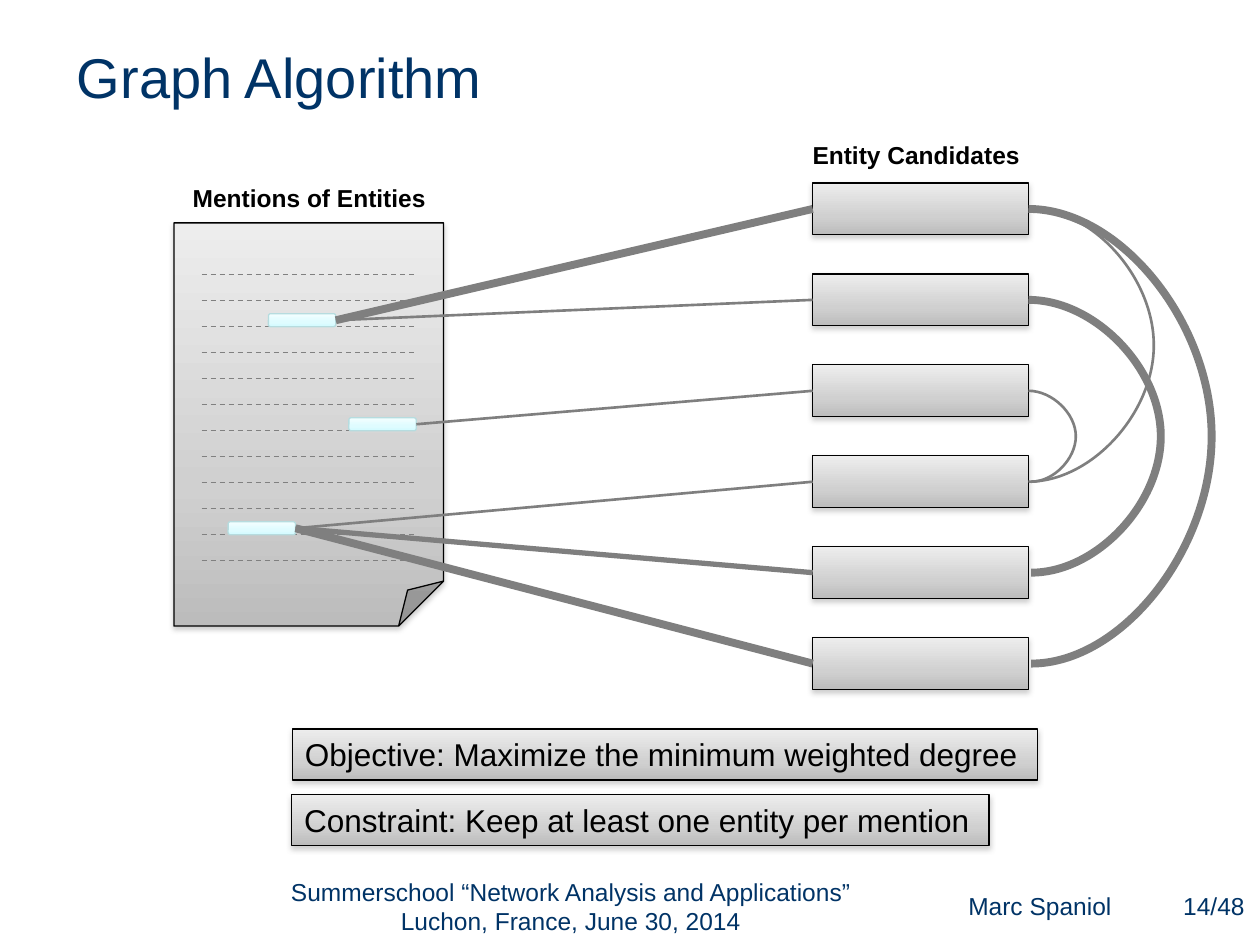
from lxml import etree
from pptx import Presentation
from pptx.dml.color import RGBColor
from pptx.enum.dml import MSO_LINE
from pptx.enum.shapes import MSO_CONNECTOR, MSO_SHAPE
from pptx.enum.text import MSO_ANCHOR, MSO_AUTO_SIZE, PP_ALIGN
from pptx.oxml.ns import qn
from pptx.util import Pt

STRAIGHT, CURVE = MSO_CONNECTOR.STRAIGHT, MSO_CONNECTOR.CURVE
RECTANGLE, ROUNDED = MSO_SHAPE.RECTANGLE, MSO_SHAPE.ROUNDED_RECTANGLE
FOLDED_CORNER = MSO_SHAPE.FOLDED_CORNER
DASH = MSO_LINE.DASH
LEFT, CENTER = PP_ALIGN.LEFT, PP_ALIGN.CENTER
TOP, MIDDLE = MSO_ANCHOR.TOP, MSO_ANCHOR.MIDDLE
FIT_TEXT = MSO_AUTO_SIZE.SHAPE_TO_FIT_TEXT
LEFT_SIDE, RIGHT_SIDE = 1, 3

FONT = "Arial"
NAVY = RGBColor(0x00, 0x33, 0x66)
BLACK = RGBColor(0x00, 0x00, 0x00)
EDGE_GRAY = RGBColor(0x7F, 0x7F, 0x7F)
RULE_GRAY = RGBColor(0x80, 0x80, 0x80)
MENTION_BORDER = RGBColor(0xB6, 0xDC, 0xDF)
GRAY_STOPS = [(0, RGBColor(0xED, 0xED, 0xED)), (65, RGBColor(0xD0, 0xD0, 0xD0)),
              (100, RGBColor(0xBC, 0xBC, 0xBC))]
CYAN_STOPS = [(0, RGBColor(0xD3, 0xFB, 0xFF)), (35, RGBColor(0xDF, 0xFC, 0xFF)),
              (100, RGBColor(0xF2, 0xFE, 0xFF))]

THIN, MEDIUM, THICK = 1.5, 3, 4.5

# Text line in the page and left offset of each mention
MENTIONS = [(2, 54), (6, 100), (10, 31)]
# Mention, candidate, weight
MENTION_EDGES = [(0, 0, THICK), (0, 1, THIN), (1, 2, THIN),
                 (2, 5, THICK), (2, 3, THIN), (2, 4, MEDIUM)]
# Candidate, candidate, weight, distance of the curve's middle control line
CANDIDATE_EDGES = [(0, 5, THICK, 104.5), (2, 3, THIN, 27),
                   (1, 4, THICK, 75.5), (3, 0, THIN, 71.5)]


def write(shape, text, size, color, align=LEFT, anchor=TOP, bold=False):
    frame = shape.text_frame
    frame.vertical_anchor = anchor
    paragraph = frame.paragraphs[0]
    paragraph.alignment = align
    run = paragraph.add_run()
    run.text = text
    run.font.name = FONT
    run.font.size = Pt(size)
    run.font.bold = bold
    run.font.color.rgb = color
    return frame


def add_text(slide, box, text, color, **style):
    shape = slide.shapes.add_textbox(*map(Pt, box))
    return write(shape, text, 14, color, **style)


def add_label(slide, box, text):
    frame = add_text(slide, box, text, BLACK, bold=True)
    frame.word_wrap = False
    frame.auto_size = FIT_TEXT


def add_gradient_shape(shapes, kind, box, stops, angle, border):
    shape = shapes.add_shape(kind, *map(Pt, box))
    shape.fill.gradient()
    shape.fill.gradient_angle = angle
    stop_list = shape._element.spPr.find(qn("a:gradFill")).find(qn("a:gsLst"))
    for stop in list(stop_list):
        stop_list.remove(stop)
    for position, color in stops:
        stop = etree.SubElement(stop_list, qn("a:gs"), pos=str(position * 1000))
        etree.SubElement(stop, qn("a:srgbClr"), val=str(color))
    shape.line.color.rgb = border
    shape.line.width = Pt(0.75)
    shape.shadow.inherit = False
    return shape


def add_gray_shape(shapes, kind, box):
    shape = add_gradient_shape(shapes, kind, box, GRAY_STOPS, 270, BLACK)
    effects = shape._element.spPr.find(qn("a:effectLst"))
    shadow = etree.SubElement(effects, qn("a:outerShdw"), blurRad=str(Pt(3.1)),
                              dist=str(Pt(1.6)), dir="5400000", rotWithShape="0")
    color = etree.SubElement(shadow, qn("a:srgbClr"), val=str(RULE_GRAY))
    etree.SubElement(color, qn("a:alpha"), val="38000")
    return shape


def add_line(shapes, kind, start, end, color, width):
    line = shapes.add_connector(kind, *map(Pt, (*start, *end)))
    line.line.color.rgb = color
    line.line.width = Pt(width)
    etree.SubElement(line._element.spPr, qn("a:effectLst"))
    return line


def add_title(slide, box, text):
    title = slide.shapes.title
    title.left, title.top, title.width, title.height = map(Pt, box)
    write(title, text, 32, NAVY, anchor=MIDDLE)


def add_page(slide, box):
    """Draw the folded page with its text lines; return the mention shapes."""
    left, top, width, height = box
    shapes = slide.shapes.add_group_shape().shapes
    add_gray_shape(shapes, FOLDED_CORNER, box)

    # Twelve dashed text lines
    pitch = 14.86
    rules = [top + 29.6 + index * pitch for index in range(12)]
    for y in rules:
        rule = add_line(shapes, STRAIGHT, (left + 15.8, y),
                        (left + width - 15.7, y), RULE_GRAY, 0.75)
        rule.line.dash_style = DASH

    # Mentions stand on their text lines
    mention_height = pitch / 2
    return [add_gradient_shape(shapes, ROUNDED,
                               (left + offset, rules[index] - mention_height,
                                38.5, mention_height),
                               CYAN_STOPS, 90, MENTION_BORDER)
            for index, offset in MENTIONS]


def add_candidates(slide, box):
    """Draw six equal candidates and the curves between them."""
    left, top, width, height = box
    box_height = 29.6
    pitch = (height - box_height) / 5
    candidates = [add_gray_shape(slide.shapes, RECTANGLE,
                                 (left, top + index * pitch, width, box_height))
                  for index in range(6)]

    # Weighted curves on the right side
    right, span = left + width, 1.5
    for first, second, weight, bulge in CANDIDATE_EDGES:
        start_y, end_y = (top + index * pitch + box_height / 2
                          for index in (first, second))
        curve = add_line(slide.shapes, CURVE, (right, start_y),
                         (right + span, end_y), EDGE_GRAY, weight)
        geometry = curve._element.spPr.find(qn("a:prstGeom"))
        guides = geometry.find(qn("a:avLst"))
        etree.SubElement(guides, qn("a:gd"), name="adj1",
                         fmla=f"val {round(bulge / span * 100000)}")
    return candidates


def add_mention_edges(slide, mentions, candidates):
    for mention, candidate, weight in MENTION_EDGES:
        edge = add_line(slide.shapes, STRAIGHT, (0, 0), (0, 0), EDGE_GRAY, weight)
        edge.begin_connect(mentions[mention], RIGHT_SIDE)
        edge.end_connect(candidates[candidate], LEFT_SIDE)


def add_banner(slide, box, text):
    shape = add_gray_shape(slide.shapes, RECTANGLE, box)
    frame = write(shape, text, 18, BLACK)
    frame.word_wrap = False
    frame.auto_size = FIT_TEXT


def add_footer(slide, top, height):
    parts = [(150.5, 351.4, "Summerschool “Network Analysis and Applications” "
                            "Luchon, France, June 30, 2014"),
             (534.2, 120.2, "Marc Spaniol"),
             (672.5, 44, "14/48")]
    for left, width, text in parts:
        frame = add_text(slide, (left, top, width, height), text, NAVY,
                         align=CENTER, anchor=MIDDLE)
        frame.word_wrap = True
    # The page number has narrow margins
    frame.margin_left, frame.margin_right = Pt(2), Pt(3.6)


def main():
    presentation = Presentation()
    presentation.slide_width, presentation.slide_height = Pt(720), Pt(540)
    slide = presentation.slides.add_slide(presentation.slide_layouts[5])

    add_title(slide, (36.7, 20.6, 646.6, 45.4), "Graph Algorithm")

    # Graph of mentions and candidates
    mentions = add_page(slide, (99.4, 127.4, 154.1, 230.4))
    candidates = add_candidates(slide, (464.4, 104.6, 123.3, 289.4))
    add_mention_edges(slide, mentions, candidates)
    add_label(slide, (103, 100.8, 149, 24.5), "Mentions of Entities")
    add_label(slide, (457.2, 76.6, 134, 24.5), "Entity Candidates")

    # Goal of the algorithm
    add_banner(slide, (167.2, 416.6, 425.6, 29.1),
               "Objective: Maximize the minimum weighted degree")
    add_banner(slide, (166.7, 453.9, 398.5, 29.1),
               "Constraint: Keep at least one entity per mention")

    add_footer(slide, 499, 37.4)
    presentation.save("out.pptx")


if __name__ == "__main__":
    main()
